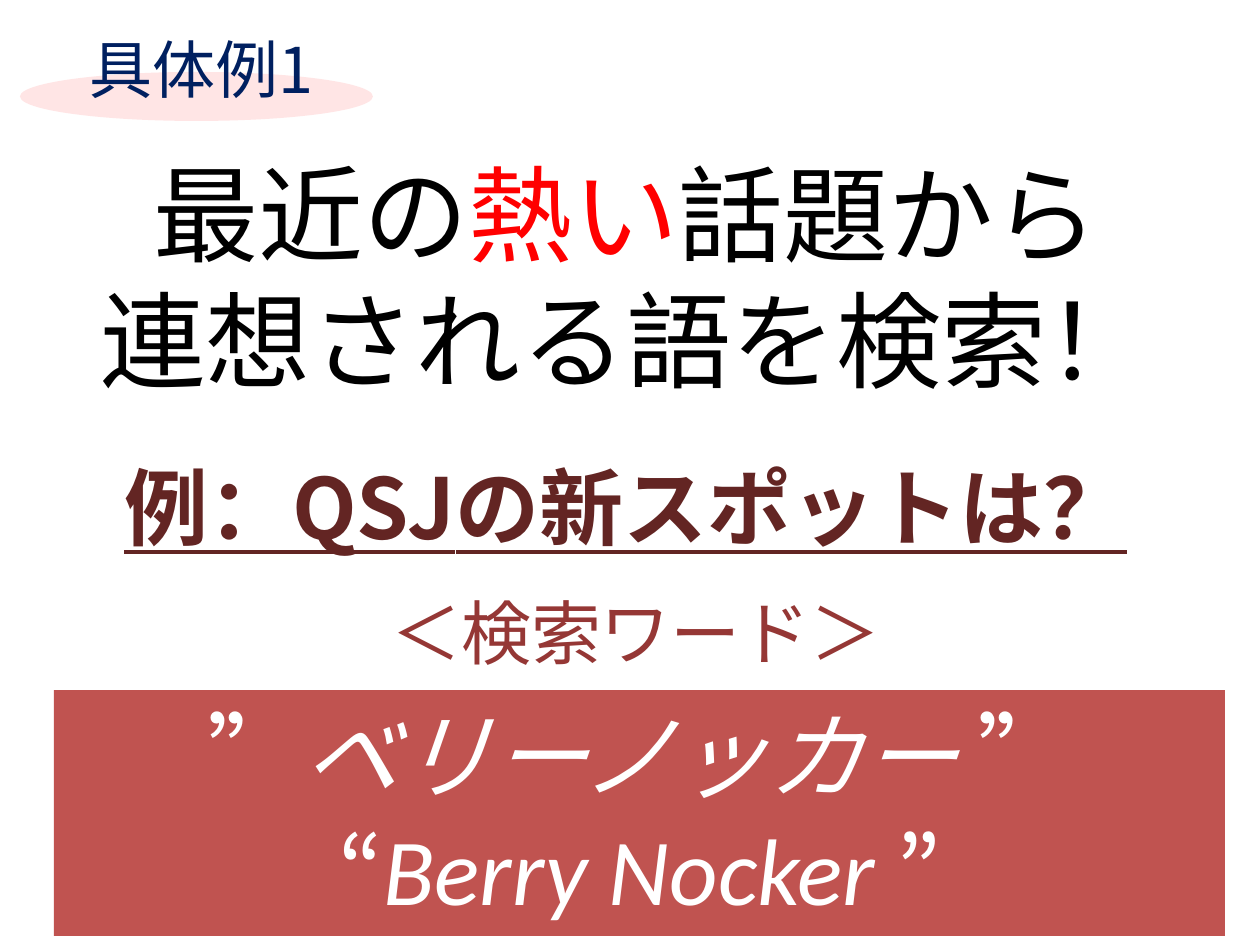
from pptx import Presentation
from pptx.dml.color import RGBColor
from pptx.enum.shapes import MSO_SHAPE
from pptx.enum.text import MSO_ANCHOR, MSO_AUTO_SIZE, PP_ALIGN
from pptx.oxml.ns import qn
from pptx.util import Emu, Pt
from lxml import etree

EMU_PER_PX = 914400 / 126
CENTER = PP_ALIGN.CENTER
MIDDLE = MSO_ANCHOR.MIDDLE
TOP = MSO_ANCHOR.TOP
NO_AUTOFIT = MSO_AUTO_SIZE.NONE
ELLIPSE = MSO_SHAPE.OVAL
RECTANGLE = MSO_SHAPE.RECTANGLE

LATIN_FONT = "Calibri"
JAPANESE_FONT = "Noto Sans CJK JP"

BLACK = RGBColor(0x00, 0x00, 0x00)
WHITE = RGBColor(0xFF, 0xFF, 0xFF)
RED = RGBColor(0xFF, 0x00, 0x00)
NAVY = RGBColor(0x00, 0x20, 0x60)
PINK = RGBColor(0xFF, 0xE5, 0xE5)
BRICK = RGBColor(0xC0, 0x53, 0x50)
MAROON = RGBColor(0x63, 0x25, 0x23)
DARK_RED = RGBColor(0x95, 0x37, 0x35)


def px(length):
    return Emu(round(length * EMU_PER_PX))


def add_backdrop(slide, kind, box, color):
    shape = slide.shapes.add_shape(kind, *map(px, box))
    shape.shadow.inherit = False
    shape.fill.solid()
    shape.fill.fore_color.rgb = color
    shape.line.fill.background()


def add_run(paragraph, text, size, color, font=JAPANESE_FONT,
            bold=False, italic=False, underline=False):
    run = paragraph.add_run()
    run.text = text
    run.font.size = Pt(size)
    run.font.color.rgb = color
    run.font.name = font
    run.font.bold = bold
    run.font.italic = italic
    run.font.underline = underline
    east_asian = etree.Element(qn("a:ea"), typeface=JAPANESE_FONT)
    run.font._element.find(qn("a:latin")).addnext(east_asian)


def prepare_text(shape, box, paragraph_count=1, anchor=MIDDLE):
    shape.left, shape.top, shape.width, shape.height = map(px, box)
    frame = shape.text_frame
    frame.word_wrap = True
    frame.auto_size = NO_AUTOFIT
    frame.vertical_anchor = anchor
    for _ in range(paragraph_count - 1):
        frame.add_paragraph()
    for paragraph in frame.paragraphs:
        paragraph.alignment = CENTER
    return frame.paragraphs


def add_text(slide, box, paragraph_count=1):
    return prepare_text(slide.shapes.add_textbox(*map(px, box)), box, paragraph_count)


def main():
    presentation = Presentation()
    presentation.slide_width = px(1260)
    presentation.slide_height = px(945)
    slide = presentation.slides.add_slide(presentation.slide_layouts[0])
    title, subtitle = slide.placeholders

    add_backdrop(slide, ELLIPSE, (20, 72, 353, 49), PINK)
    add_backdrop(slide, RECTANGLE, (54, 690, 1171, 246), BRICK)
    for placeholder in (title, subtitle):
        slide.shapes._spTree.append(placeholder._element)

    first, second = prepare_text(title, (-4, 97, 1260, 357), 2)
    add_run(first, "最近の", 60, BLACK)
    add_run(first, "熱い", 60, RED)
    add_run(first, "話題から", 60, BLACK)
    add_run(second, "連想される語を検索！", 60, BLACK)

    japanese, english = add_text(slide, (10, 662, 1260, 297), 2)
    add_run(japanese, "”", 54, WHITE, LATIN_FONT)
    add_run(japanese, "ベリーノッカー ", 54, WHITE, LATIN_FONT, italic=True)
    add_run(japanese, "”", 54, WHITE, LATIN_FONT)
    add_run(english, "“", 54, WHITE)
    add_run(english, "Berry Nocker ", 54, WHITE, LATIN_FONT, italic=True)
    add_run(english, "”", 54, WHITE)

    [example] = add_text(slide, (-4, 407, 1260, 198))
    add_run(example, "例：QSJの新スポットは？", 48, MAROON, bold=True, underline=True)

    [caption] = add_text(slide, (6, 562, 1260, 139))
    add_run(caption, "＜検索ワード＞", 40, DARK_RED)

    [label] = prepare_text(subtitle, (23, 24, 343, 106), anchor=TOP)
    add_run(label, " 具体例", 36, NAVY, LATIN_FONT)
    add_run(label, "1", 36, NAVY)

    presentation.save("out.pptx")


if __name__ == "__main__":
    main()
